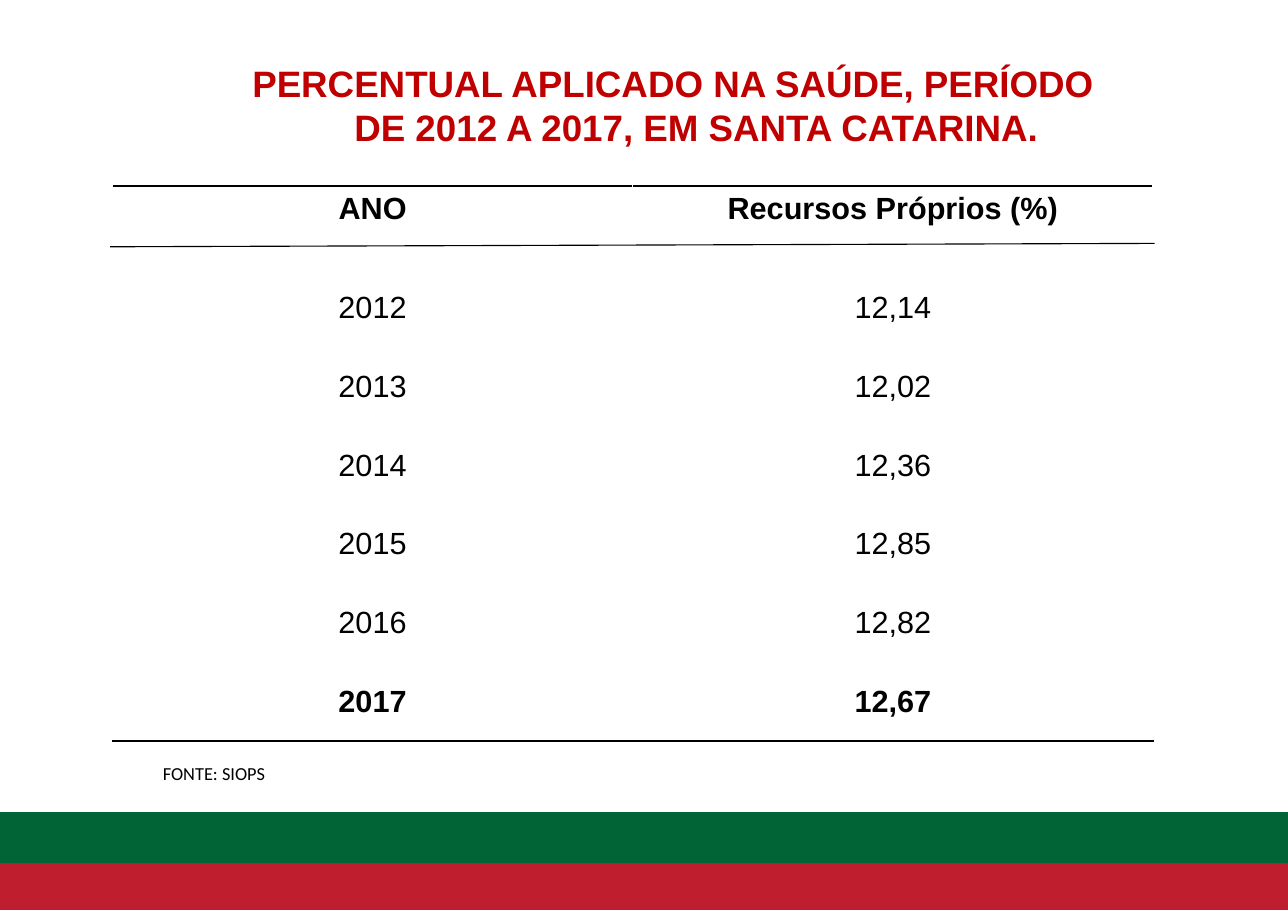
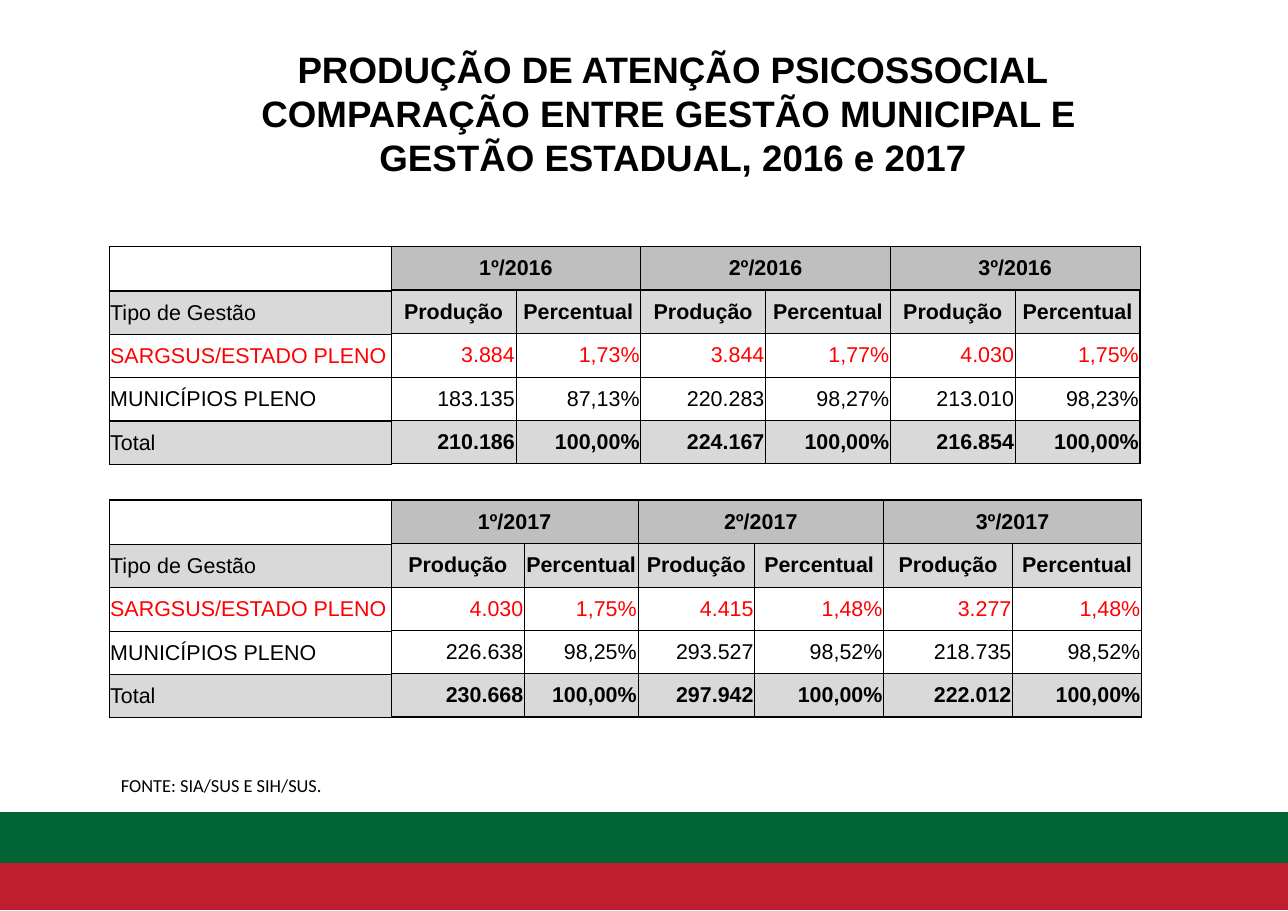
import pptx
import pptx.util
import pptx.dml.color
import pptx.enum.shapes
import pptx.enum.text
import pptx.oxml.ns
from lxml import etree

RGB = pptx.dml.color.RGBColor
BLACK = RGB(0x00, 0x00, 0x00)
WHITE = RGB(0xFF, 0xFF, 0xFF)
GREEN = RGB(0x00, 0x64, 0x36)
CRIMSON = RGB(0xBE, 0x1E, 0x2E)
TITLE_RED = RGB(0xC0, 0x00, 0x00)
ROW_RED = RGB(0xFF, 0x00, 0x00)
MID_GRAY = RGB(0xBF, 0xBF, 0xBF)
LIGHT_GRAY = RGB(0xD9, 0xD9, 0xD9)

ALIGN = pptx.enum.text.PP_ALIGN
ANCHOR = pptx.enum.text.MSO_ANCHOR
WIDTH, HEIGHT = 11.69, 8.27
THIN, THICK, RULE = 0.5, 0.96, 2

YEARS = [("2012", "12,14"), ("2013", "12,02"), ("2014", "12,36"),
         ("2015", "12,85"), ("2016", "12,82"), ("2017", "12,67")]
LABELS = ["", "Tipo de Gestão", "SARGSUS/ESTADO PLENO", "MUNICÍPIOS PLENO", "Total"]
PRODUCTION = [
    ("2016", 27.09, [9.69] * 6, [
        ["3.884", "1,73%", "3.844", "1,77%", "4.030", "1,75%"],
        ["183.135", "87,13%", "220.283", "98,27%", "213.010", "98,23%"],
        ["210.186", "100,00%", "224.167", "100,00%", "216.854", "100,00%"]]),
    ("2017", 54.9, [10.35, 8.81, 9.07, 10.01, 10.01, 10.01], [
        ["4.030", "1,75%", "4.415", "1,48%", "3.277", "1,48%"],
        ["226.638", "98,25%", "293.527", "98,52%", "218.735", "98,52%"],
        ["230.668", "100,00%", "297.942", "100,00%", "222.012", "100,00%"]]),
]


def across(percent):
    return pptx.util.Inches(WIDTH * percent / 100)


def down(percent):
    return pptx.util.Inches(HEIGHT * percent / 100)


def add_run(p, text, size, color=BLACK, bold=False, font="Arial"):
    r = p.add_run()
    r.text = text
    r.font.name = font
    r.font.size = pptx.util.Pt(size)
    r.font.bold = bold
    r.font.color.rgb = color


def add_band(s, top, color):
    sp = s.shapes.add_shape(pptx.enum.shapes.MSO_SHAPE.RECTANGLE,
                            0, down(top), across(100), down(5.44))
    sp.shadow.inherit = False
    sp.fill.solid()
    sp.fill.fore_color.rgb = color
    sp.line.color.rgb = color
    sp.line.width = pptx.util.Pt(0.75)


def add_title(s, height, lines, color=BLACK):
    tf = s.shapes.add_textbox(across(19), down(2.66), across(66.5), down(height)).text_frame
    tf.word_wrap = True
    tf.vertical_anchor = ANCHOR.MIDDLE
    tf.margin_left = tf.margin_right = tf.margin_top = tf.margin_bottom = 0
    for i, (text, left, right) in enumerate(lines):
        p = tf.add_paragraph() if i else tf.paragraphs[0]
        p.alignment = ALIGN.CENTER
        pPr = p._p.get_or_add_pPr()
        pPr.set("marL", str(across(left)))
        pPr.set("marR", str(across(right)))
        add_run(p, text, 24, color, True)


def add_source(s, left, top, text):
    tf = s.shapes.add_textbox(across(left), down(top), across(25), down(7)).text_frame
    tf.word_wrap = True
    add_run(tf.paragraphs[0], text, 12, font="Calibri")


def add_rule(s, x1, y1, x2, y2):
    line = s.shapes.add_connector(pptx.enum.shapes.MSO_CONNECTOR.STRAIGHT,
                                  across(x1), down(y1), across(x2), down(y2))
    line.line.color.rgb = BLACK
    line.line.width = pptx.util.Pt(0.75)
    etree.SubElement(line._element.spPr, pptx.oxml.ns.qn("a:effectLst"))


def add_grid(s, left, top, widths, height, rows):
    table = s.shapes.add_table(rows, len(widths), across(left), down(top),
                               across(sum(widths)), down(height)).table
    table.first_row = table.horz_banding = False
    for column, width in zip(table.columns, widths):
        column.width = across(width)
    return table


def set_borders(cell, **widths):
    tcPr = cell._tc.get_or_add_tcPr()
    for side in "LRTB":
        if side in widths:
            ln = etree.SubElement(tcPr, pptx.oxml.ns.qn("a:ln" + side),
                                  w=str(pptx.util.Pt(widths[side])))
            fill = etree.SubElement(ln, pptx.oxml.ns.qn("a:solidFill"))
            etree.SubElement(fill, pptx.oxml.ns.qn("a:srgbClr"), val=str(BLACK))


def fill_cell(cell, text, size, align, fill=None, color=BLACK, bold=False,
              anchor=ANCHOR.MIDDLE):
    cell.margin_left = cell.margin_right = pptx.util.Inches(0.01)
    cell.vertical_anchor = anchor
    if fill is None:
        cell.fill.background()
    else:
        cell.fill.solid()
        cell.fill.fore_color.rgb = fill
    p = cell.text_frame.paragraphs[0]
    p.alignment = align
    add_run(p, text, size, color, bold)


def add_percent_table(s):
    rows = [("ANO", "Recursos Próprios (%)")] + YEARS
    last = len(rows) - 1
    height, header = 60.94, 9.07
    table = add_grid(s, 8.73, 20.43, [40.4, 40.4], height, len(rows))
    for i, values in enumerate(rows):
        table.rows[i].height = down((height - header) / last if i else header)
        for j, text in enumerate(values):
            cell = table.cell(i, j)
            if i == 0:
                set_borders(cell, T=RULE)
            elif i == last:
                set_borders(cell, B=RULE)
            fill_cell(cell, text, 20, ALIGN.CENTER, WHITE, bold=i in (0, last),
                      anchor=ANCHOR.MIDDLE if i else ANCHOR.TOP)


def add_management_table(s, left, top, widths, rows, is_label):
    table = add_grid(s, left, top, widths, 23.82, len(rows))
    row_fills = [None if is_label else MID_GRAY, LIGHT_GRAY, None, None, LIGHT_GRAY]
    for i, values in enumerate(rows):
        for j, text in enumerate(values):
            cell = table.cell(i, j)
            edge = not is_label and j == len(widths) - 1
            set_borders(cell, L=THIN, R=THICK if edge else THIN,
                        T=THICK if i in (0, 1, 4) else THIN,
                        B=THICK if i in (0, 3, 4) else THIN)
            align = ALIGN.LEFT if is_label else ALIGN.CENTER if i < 2 else ALIGN.RIGHT
            fill_cell(cell, text, 14, align, row_fills[i],
                      ROW_RED if i == 2 else BLACK,
                      not is_label and i in (0, 1, 4))
    return table


def add_production_tables(s, year, top, widths, values):
    periods = [text for n in (1, 2, 3) for text in (f"{n}º/{year}", "")]
    rows = [periods, ["Produção", "Percentual"] * 3] + values
    table = add_management_table(s, 30.37, top, widths, rows, False)
    for j in range(0, len(widths), 2):
        table.cell(0, j).merge(table.cell(0, j + 1))
    add_management_table(s, 8.47, top, [21.9], [[text] for text in LABELS], True)


def new_slide(prs):
    s = prs.slides.add_slide(prs.slide_layouts[6])
    add_band(s, 94.44, CRIMSON)
    add_band(s, 89.24, GREEN)
    return s


def main():
    prs = pptx.Presentation()
    prs.slide_width, prs.slide_height = across(100), down(100)

    s = new_slide(prs)
    add_title(s, 17.78, [
        ("PERCENTUAL APLICADO NA SAÚDE, PERÍODO", 0, 0),
        ("DE 2012 A 2017, EM SANTA CATARINA.", 3.6, 0)], TITLE_RED)
    add_source(s, 11.8, 83.07, "FONTE: SIOPS")
    add_percent_table(s)
    add_rule(s, 8.55, 27.09, 89.65, 26.72)

    s = new_slide(prs)
    add_title(s, 19.47, [
        ("PRODUÇÃO DE ATENÇÃO PSICOSSOCIAL", 0, 0),
        ("COMPARAÇÃO ENTRE GESTÃO MUNICIPAL E", 0, 0.7),
        ("GESTÃO ESTADUAL, 2016 e 2017", 0, 0)])
    add_source(s, 8.55, 84.4, "FONTE: SIA/SUS E SIH/SUS.")
    for year, top, widths, values in PRODUCTION:
        add_production_tables(s, year, top, widths, values)

    prs.save("out.pptx")


if __name__ == "__main__":
    main()
